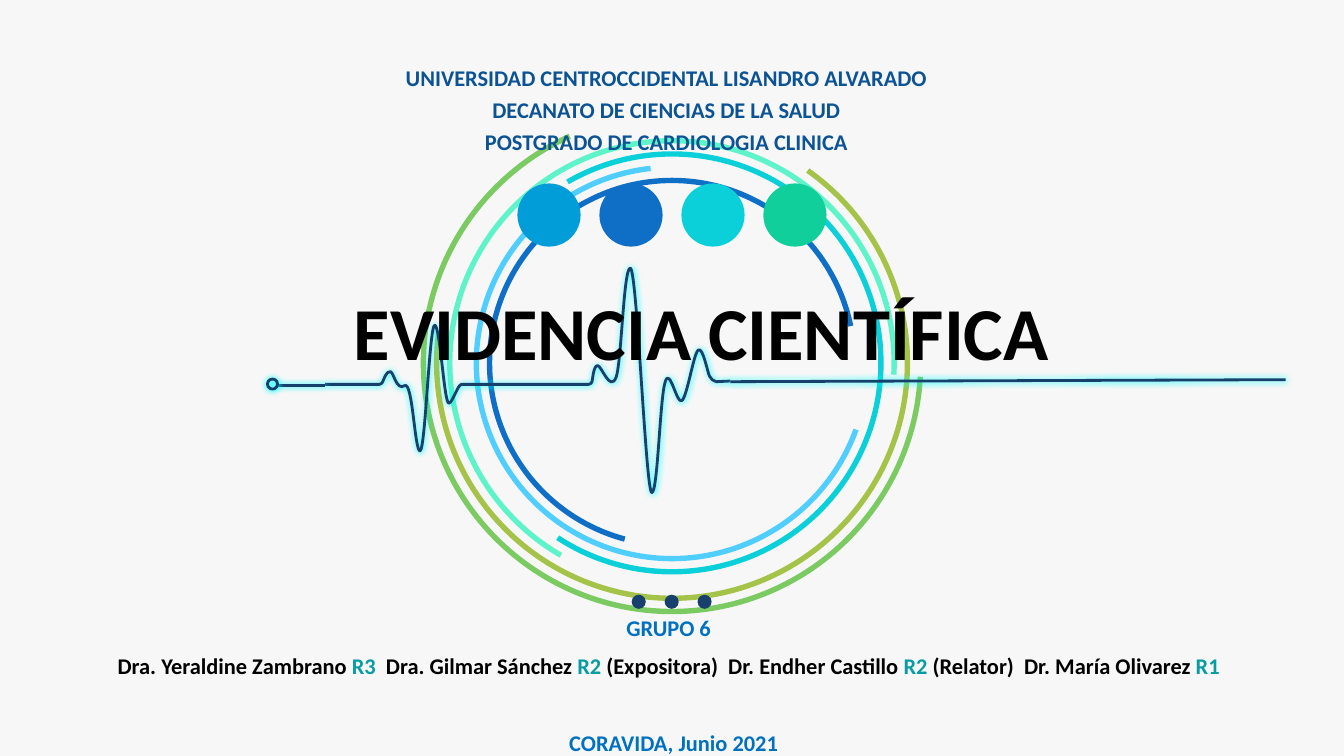
from dataclasses import dataclass

from lxml import etree
from pptx import Presentation
from pptx.dml.color import RGBColor
from pptx.enum.shapes import MSO_CONNECTOR, MSO_SHAPE
from pptx.enum.text import MSO_ANCHOR, PP_ALIGN
from pptx.oxml.ns import qn
from pptx.util import Inches, Pt

ARC, OVAL = MSO_SHAPE.BLOCK_ARC, MSO_SHAPE.OVAL
STRAIGHT = MSO_CONNECTOR.STRAIGHT
TOP, BOTTOM = MSO_ANCHOR.TOP, MSO_ANCHOR.BOTTOM
CENTER = PP_ALIGN.CENTER


@dataclass(frozen=True)
class Theme:
    font: str = "Calibri"
    title_size: int = 80
    text_size: int = 24
    trace_width: int = 3
    glow_blur: int = 7
    paper: str = "F7F7F7"
    ink: str = "000000"
    heading: str = "0B5394"
    accent: str = "0070C0"
    rank: str = "089CA3"
    navy: str = "17406D"
    glow: str = "01FFFF"
    marker: str = "69FFFF"
    blue: str = "0F6FC6"
    sky: str = "4FCEFF"
    cyan: str = "0BD0D9"
    mint: str = "5FF3CA"
    olive: str = "A5C249"
    green: str = "7CCA62"
    azure: str = "009DD9"
    emerald: str = "10CF9B"


THEME = Theme()

# Rings from the inside out: colour, rotation, end angle of the arc
RINGS = [
    (THEME.blue, 285, 63.36),
    (THEME.sky, 199.9, 63.82),
    (THEME.cyan, 60, 63.18),
    (THEME.mint, 300, 63.03),
    (THEME.olive, 125.2, 62.59),
    (THEME.green, 183.2, 62.48),
]
RING_CENTER = (10, 5.4)
RING_INNER, RING_OUTER, RING_THICKNESS = 5.51, 7.48, 0.08

# Heartbeat: one point makes a straight segment, three make a Bezier curve
WAVE_START = (4.84, 5.72)
WAVE = [
    [(5.65, 5.72)],
    [(5.68, 5.72), (5.69, 5.69), (5.7, 5.67)],
    [(5.71, 5.65), (5.75, 5.52), (5.81, 5.53)],
    [(5.86, 5.54), (5.9, 5.82), (6.02, 5.74)],
    [(6.14, 5.65), (6.17, 6.71), (6.25, 6.71)],
    [(6.33, 6.71), (6.39, 4.83), (6.47, 4.84)],
    [(6.55, 4.85), (6.61, 6.01), (6.68, 6)],
    [(6.74, 5.99), (6.81, 5.72), (6.87, 5.72)],
    [(6.92, 5.72), (8.13, 5.72), (8.76, 5.72)],
    [(8.79, 5.72), (8.8, 5.7), (8.81, 5.68)],
    [(8.82, 5.65), (8.83, 5.45), (8.89, 5.44)],
    [(8.95, 5.43), (9.08, 5.85), (9.17, 5.61)],
    [(9.25, 5.37), (9.28, 3.98), (9.38, 3.99)],
    [(9.48, 4), (9.61, 7.33), (9.7, 7.33)],
    [(9.79, 7.33), (9.82, 5.91), (9.9, 5.68)],
    [(9.97, 5.45), (10.07, 6.03), (10.15, 5.96)],
    [(10.23, 5.88), (10.32, 5.27), (10.39, 5.21)],
    [(10.46, 5.15), (10.53, 5.55), (10.56, 5.6)],
    [(10.58, 5.64), (10.61, 5.67), (10.66, 5.68)],
    [(10.87, 5.67)],
]

HEADING = [
    "UNIVERSIDAD CENTROCCIDENTAL LISANDRO ALVARADO",
    "DECANATO DE CIENCIAS DE LA SALUD",
    "POSTGRADO DE CARDIOLOGIA CLINICA",
]
AUTHORS = [
    ("Dra. Yeraldine Zambrano ", THEME.ink),
    ("R3  ", THEME.rank),
    ("Dra. Gilmar Sánchez ", THEME.ink),
    ("R2 ", THEME.rank),
    ("(Expositora)  Dr. Endher Castillo ", THEME.ink),
    ("R2 ", THEME.rank),
    ("(Relator)  Dr. María Olivarez ", THEME.ink),
    ("R1", THEME.rank),
]


def rgb(color):
    return RGBColor.from_string(color)


def add_solid(page, kind, left, top, size, color):
    shape = page.shapes.add_shape(kind, Inches(left), Inches(top), Inches(size), Inches(size))
    shape.shadow.inherit = False
    shape.fill.solid()
    shape.fill.fore_color.rgb = rgb(color)
    shape.line.fill.background()
    return shape


def add_rings(page):
    step = (RING_OUTER - RING_INNER) / (len(RINGS) - 1)
    center_x, center_y = RING_CENTER
    for index, (color, rotation, end_angle) in enumerate(RINGS):
        size = RING_INNER + index * step
        ring = add_solid(page, ARC, center_x - size / 2, center_y - size / 2, size, color)
        ring.rotation = rotation
        # Angles are stored in 60000ths of a degree, adjustments in 100000ths
        ring.adjustments[0] = 180 * 0.6
        ring.adjustments[1] = end_angle * 0.6
        ring.adjustments[2] = RING_THICKNESS / size


def add_circle_row(page, left, top, size, step, colors):
    for index, color in enumerate(colors):
        add_solid(page, OVAL, left + index * step, top, size, color)


def style_trace(shape):
    """Give a part of the heartbeat its dark line and bright glow."""
    shape.line.color.rgb = rgb(THEME.navy)
    shape.line.width = Pt(THEME.trace_width)
    properties = shape._element.spPr
    effects = properties.find(qn("a:effectLst"))
    if effects is None:
        effects = etree.SubElement(properties, qn("a:effectLst"))
    glow = etree.SubElement(effects, qn("a:outerShdw"), blurRad=str(Pt(THEME.glow_blur)),
                            dist="0", dir="0", algn="ctr", rotWithShape="0")
    etree.SubElement(glow, qn("a:srgbClr"), val=THEME.glow)


def add_wave(page):
    points = [(Inches(x), Inches(y)) for segment in WAVE for x, y in segment]
    builder = page.shapes.build_freeform(*map(Inches, WAVE_START), scale=1.0)
    builder.add_line_segments(points, close=False)
    wave = builder.convert_to_shape()
    steps = iter(list(wave._element.iter(qn("a:lnTo"))))
    for segment in WAVE:
        parts = [next(steps) for _ in segment]
        if len(parts) == 3:
            curve = etree.Element(qn("a:cubicBezTo"))
            parts[0].addprevious(curve)
            for part in parts:
                curve.append(part[0])
                part.getparent().remove(part)
    wave.shadow.inherit = False
    wave.fill.background()
    style_trace(wave)


def add_trace_line(page, start, end):
    line = page.shapes.add_connector(STRAIGHT, *map(Inches, start + end))
    style_trace(line)


def add_text_box(page, left, top, width, height, anchor=TOP, bottom_inset=0.09):
    box = page.shapes.add_textbox(Inches(left), Inches(top), Inches(width), Inches(height))
    frame = box.text_frame
    frame.word_wrap = True
    frame.vertical_anchor = anchor
    frame.margin_left = frame.margin_right = Inches(0.18)
    frame.margin_top, frame.margin_bottom = Inches(0.09), Inches(bottom_inset)
    return frame


def add_span(para, text, color, size=THEME.text_size):
    span = para.add_run()
    span.text = text
    span.font.name = THEME.font
    span.font.size = Pt(size)
    span.font.bold = True
    span.font.color.rgb = rgb(color)


def add_heading(page):
    para = add_text_box(page, 1.41, -0.09, 17.01, 3.35, BOTTOM, 0.95).paragraphs[0]
    para.alignment = CENTER
    para.line_spacing = 1.2
    for index, text in enumerate(HEADING):
        if index:
            para.add_line_break()
        add_span(para, text, THEME.heading)


def add_credits(page):
    frame = add_text_box(page, -3.05, 9.05, 26, 5.42)
    lines = [
        ([("GRUPO 6", THEME.accent)], 0),
        (AUTHORS, 12),
        ([("CORAVIDA, Junio 2021", THEME.accent)], 53),
    ]
    for index, (spans, space_before) in enumerate(lines):
        para = frame.add_paragraph() if index else frame.paragraphs[0]
        para.alignment = CENTER
        para.space_before = Pt(space_before)
        for text, color in spans:
            add_span(para, text, color)
    # The closing line sits slightly right of the centre
    para._p.get_or_add_pPr().set("marL", str(Inches(0.15)))


def add_title(page):
    para = add_text_box(page, 0.41, 3.5, 20.07, 3.86).paragraphs[0]
    para.alignment = CENTER
    para.line_spacing = 1.5
    add_span(para, "EVIDENCIA CIENTÍFICA", THEME.ink, THEME.title_size)


def main():
    deck = Presentation()
    deck.slide_width, deck.slide_height = Inches(20), Inches(11.25)
    page = deck.slides.add_slide(deck.slide_layouts[6])
    page.background.fill.solid()
    page.background.fill.fore_color.rgb = rgb(THEME.paper)

    add_rings(page)
    add_circle_row(page, 9.4, 8.85, 0.21, 0.49, [THEME.navy] * 3)
    add_circle_row(page, 7.7, 2.73, 0.94, 1.22,
                   [THEME.azure, THEME.blue, THEME.cyan, THEME.emerald])
    add_heading(page)
    add_credits(page)
    add_wave(page)
    add_trace_line(page, (10.87, 5.68), (19.13, 5.65))
    add_trace_line(page, (4.09, 5.74), (4.84, 5.74))
    style_trace(add_solid(page, OVAL, 3.98, 5.64, 0.15, THEME.marker))
    add_title(page)
    deck.save("out.pptx")


if __name__ == "__main__":
    main()
